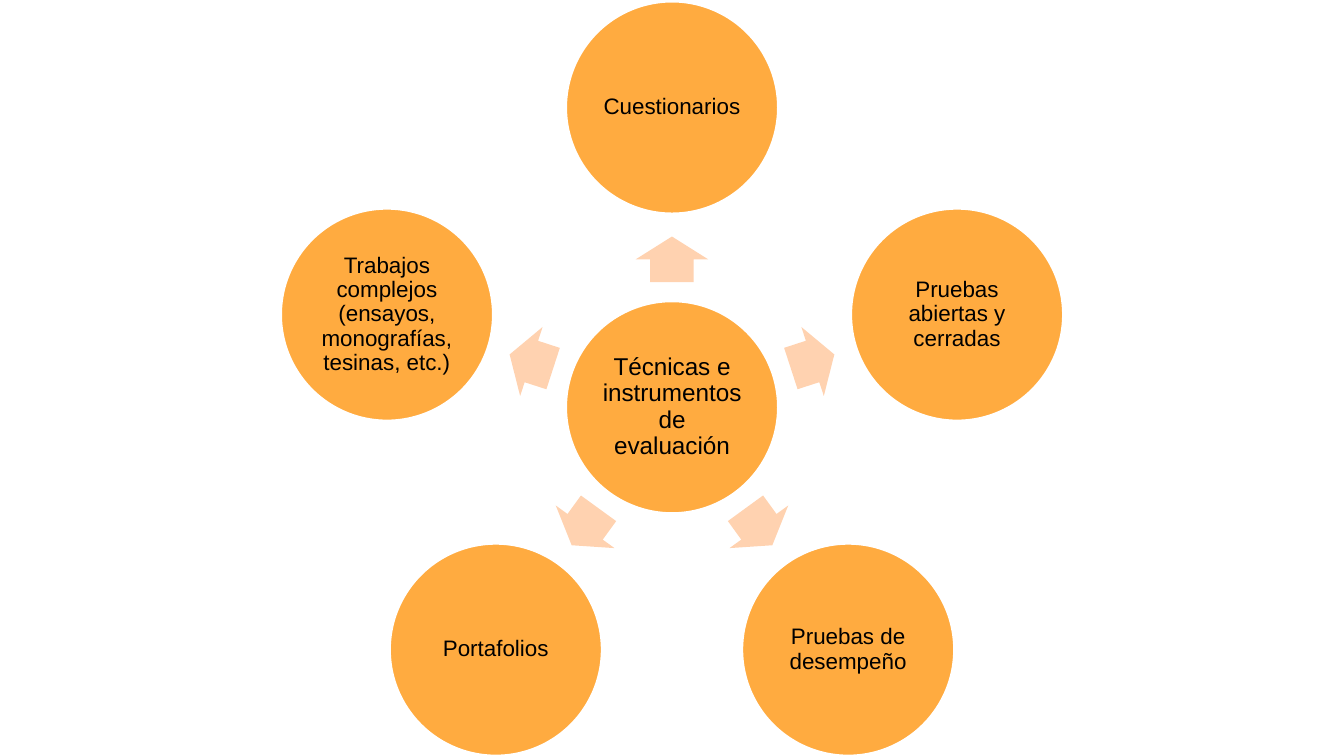
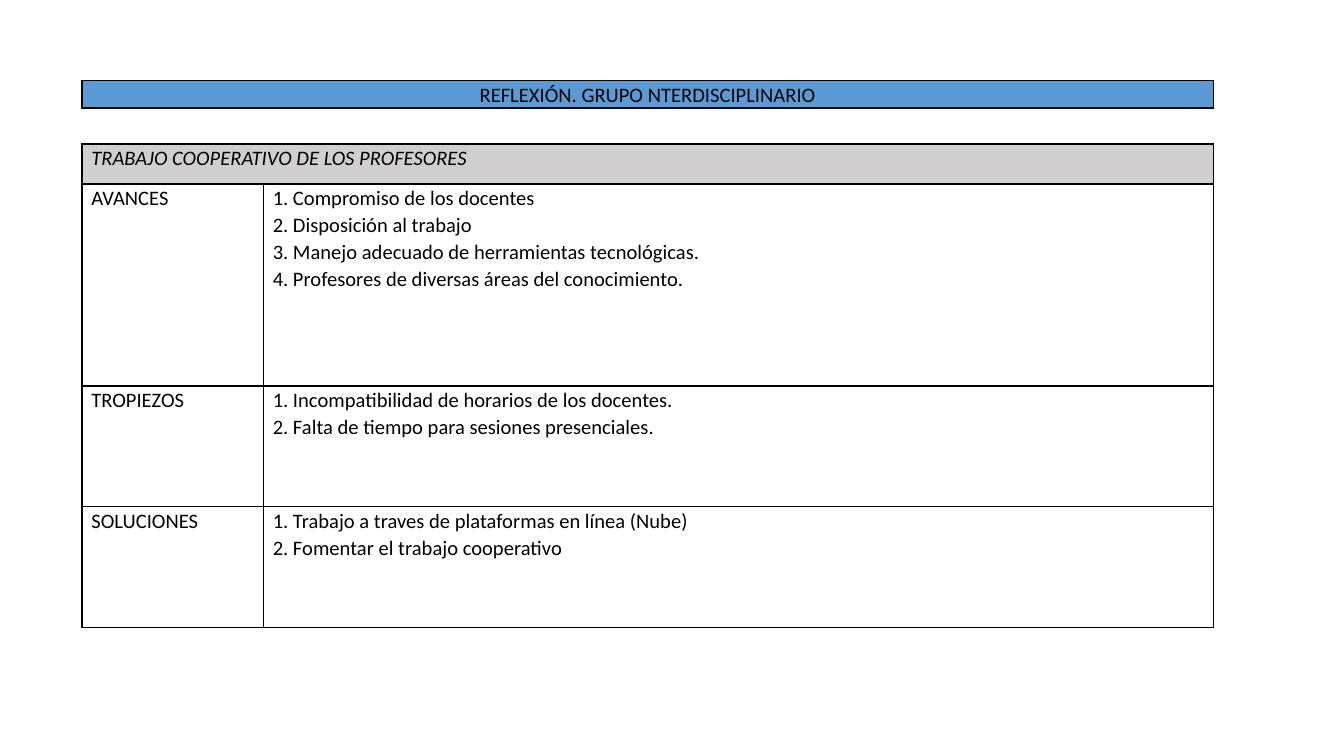
import math
from typing import NamedTuple

from lxml import etree
from pptx import Presentation
from pptx.dml.color import RGBColor
from pptx.enum.shapes import MSO_SHAPE
from pptx.enum.text import MSO_ANCHOR, PP_ALIGN
from pptx.oxml.ns import qn
from pptx.util import Inches, Pt

OVAL = MSO_SHAPE.OVAL
RIGHT_ARROW = MSO_SHAPE.RIGHT_ARROW
LEFT, CENTER = PP_ALIGN.LEFT, PP_ALIGN.CENTER
TOP, MIDDLE = MSO_ANCHOR.TOP, MSO_ANCHOR.MIDDLE

BLACK = "000000"
WHITE = "FFFFFF"
ORANGE = "FFAB40"
PEACH = "FFD2B0"
BLUE = "5B9BD5"
GRAY = "D0CECE"

HUB_X, HUB_Y = 5, 3.03
CIRCLE_SIZE = 1.59
ORBIT_RADIUS = 2.23
ARROW_RADIUS = 1.1
ARROW_WIDTH, ARROW_HEIGHT = 0.34, 0.54

TABLE_LEFT, TABLE_WIDTH = 0.61, 8.42
LABEL_WIDTH = 1.35
BORDER_WIDTH = Pt(1)


class ReflectionRow(NamedTuple):
    label: str
    points: list[str]
    height: float


HUB = "Técnicas e instrumentos de evaluación"
INSTRUMENTS = [
    "Cuestionarios",
    "Pruebas abiertas y cerradas",
    "Pruebas de desempeño",
    "Portafolios",
    "Trabajos complejos (ensayos, monografías, tesinas, etc.)",
]

REFLECTION_TITLE = "REFLEXIÓN. GRUPO NTERDISCIPLINARIO"
REFLECTION_HEADING = "TRABAJO COOPERATIVO DE LOS PROFESORES"
REFLECTIONS = [
    ReflectionRow("AVANCES", [
        "1. Compromiso de los docentes",
        "2. Disposición al trabajo",
        "3. Manejo adecuado de herramientas tecnológicas.",
        "4. Profesores de diversas áreas del conocimiento.",
    ], 1.5),
    ReflectionRow("TROPIEZOS", [
        "1. Incompatibilidad de horarios de los docentes.",
        "2. Falta de tiempo para sesiones presenciales.",
    ], 0.9),
    ReflectionRow("SOLUCIONES", [
        "1. Trabajo a traves de plataformas en línea (Nube)",
        "2. Fomentar el trabajo cooperativo",
    ], 0.9),
]


def rgb(value: str) -> RGBColor:
    return RGBColor.from_string(value)


def write_text(frame, lines: list[str], *, font: str, size: float, align=LEFT,
               spacing: float = 1.0, italic: bool = False) -> None:
    frame.word_wrap = True
    for index, line in enumerate(lines):
        paragraph = frame.add_paragraph() if index else frame.paragraphs[0]
        paragraph.alignment = align
        paragraph.line_spacing = spacing
        run = paragraph.add_run()
        run.text = line
        run.font.name = font
        run.font.size = Pt(size)
        run.font.italic = italic
        run.font.color.rgb = rgb(BLACK)


def add_centered(slide, preset, x: float, y: float, width: float, height: float, fill: str):
    shape = slide.shapes.add_shape(preset, Inches(x - width / 2), Inches(y - height / 2),
                                   Inches(width), Inches(height))
    shape.shadow.inherit = False
    shape.fill.solid()
    shape.fill.fore_color.rgb = rgb(fill)
    shape.line.fill.background()
    return shape


def add_circle(slide, x: float, y: float, text: str, size: float) -> None:
    circle = add_centered(slide, OVAL, x, y, CIRCLE_SIZE, CIRCLE_SIZE, ORANGE)
    circle.line.color.rgb = rgb(WHITE)
    circle.line.width = Pt(2)
    frame = circle.text_frame
    frame.vertical_anchor = MIDDLE
    frame.margin_left = frame.margin_right = Inches(0.02)
    frame.margin_top = frame.margin_bottom = Inches(0.02)
    write_text(frame, [text], font="Arial", size=size, align=CENTER, spacing=0.9)


def add_arrow(slide, x: float, y: float, degrees: float) -> None:
    arrow = add_centered(slide, RIGHT_ARROW, x, y, ARROW_WIDTH, ARROW_HEIGHT, PEACH)
    arrow.adjustments[0] = 0.6
    arrow.adjustments[1] = 0.5
    arrow.rotation = degrees % 360


def on_orbit(radius: float, degrees: float) -> tuple[float, float]:
    angle = math.radians(degrees)
    return HUB_X + radius * math.cos(angle), HUB_Y + radius * math.sin(angle)


def add_borders(cell) -> None:
    properties = cell._tc.get_or_add_tcPr()
    for side in ("a:lnL", "a:lnR", "a:lnT", "a:lnB"):
        border = etree.SubElement(properties, qn(side), w=str(BORDER_WIDTH))
        fill = etree.SubElement(border, qn("a:solidFill"))
        etree.SubElement(fill, qn("a:srgbClr"), val=BLACK)


def add_grid(slide, top: float, widths: list[float], heights: list[float]):
    table = slide.shapes.add_table(len(heights), len(widths), Inches(TABLE_LEFT), Inches(top),
                                   Inches(sum(widths)), Inches(sum(heights))).table
    table.first_row = False
    table.horz_banding = False
    for column, width in zip(table.columns, widths):
        column.width = Inches(width)
    for row, height in zip(table.rows, heights):
        row.height = Inches(height)
    for cell in table.iter_cells():
        add_borders(cell)
        cell.fill.background()
        cell.vertical_anchor = TOP
        cell.margin_left = cell.margin_right = Inches(0.07)
        cell.margin_top = cell.margin_bottom = 0
    return table


def fill_cell(cell, lines: list[str], *, fill: str = "", align=LEFT, italic: bool = False) -> None:
    if fill:
        cell.fill.solid()
        cell.fill.fore_color.rgb = rgb(fill)
    write_text(cell.text_frame, lines, font="Calibri", size=11, align=align,
               spacing=1.07, italic=italic)


def build_instruments(slide) -> None:
    add_circle(slide, HUB_X, HUB_Y, HUB, 13)
    for index, instrument in enumerate(INSTRUMENTS):
        degrees = index * 360 / len(INSTRUMENTS) - 90
        add_arrow(slide, *on_orbit(ARROW_RADIUS, degrees), degrees)
        add_circle(slide, *on_orbit(ORBIT_RADIUS, degrees), instrument, 12)


def build_reflection(slide) -> None:
    title = add_grid(slide, 0.6, [TABLE_WIDTH], [0.2])
    fill_cell(title.cell(0, 0), [REFLECTION_TITLE], fill=BLUE, align=CENTER)

    heights = [0.3] + [row.height for row in REFLECTIONS]
    reflection = add_grid(slide, 1.07, [LABEL_WIDTH, TABLE_WIDTH - LABEL_WIDTH], heights)
    heading = reflection.cell(0, 0)
    heading.merge(reflection.cell(0, 1))
    fill_cell(heading, [REFLECTION_HEADING], fill=GRAY, italic=True)
    for index, row in enumerate(REFLECTIONS, start=1):
        fill_cell(reflection.cell(index, 0), [row.label])
        fill_cell(reflection.cell(index, 1), row.points)


def main() -> None:
    deck = Presentation()
    deck.slide_width = Inches(10)
    deck.slide_height = deck.slide_width * 9 // 16
    blank = deck.slide_layouts[6]
    for build in (build_instruments, build_reflection):
        build(deck.slides.add_slide(blank))
    deck.save("out.pptx")


if __name__ == "__main__":
    main()
